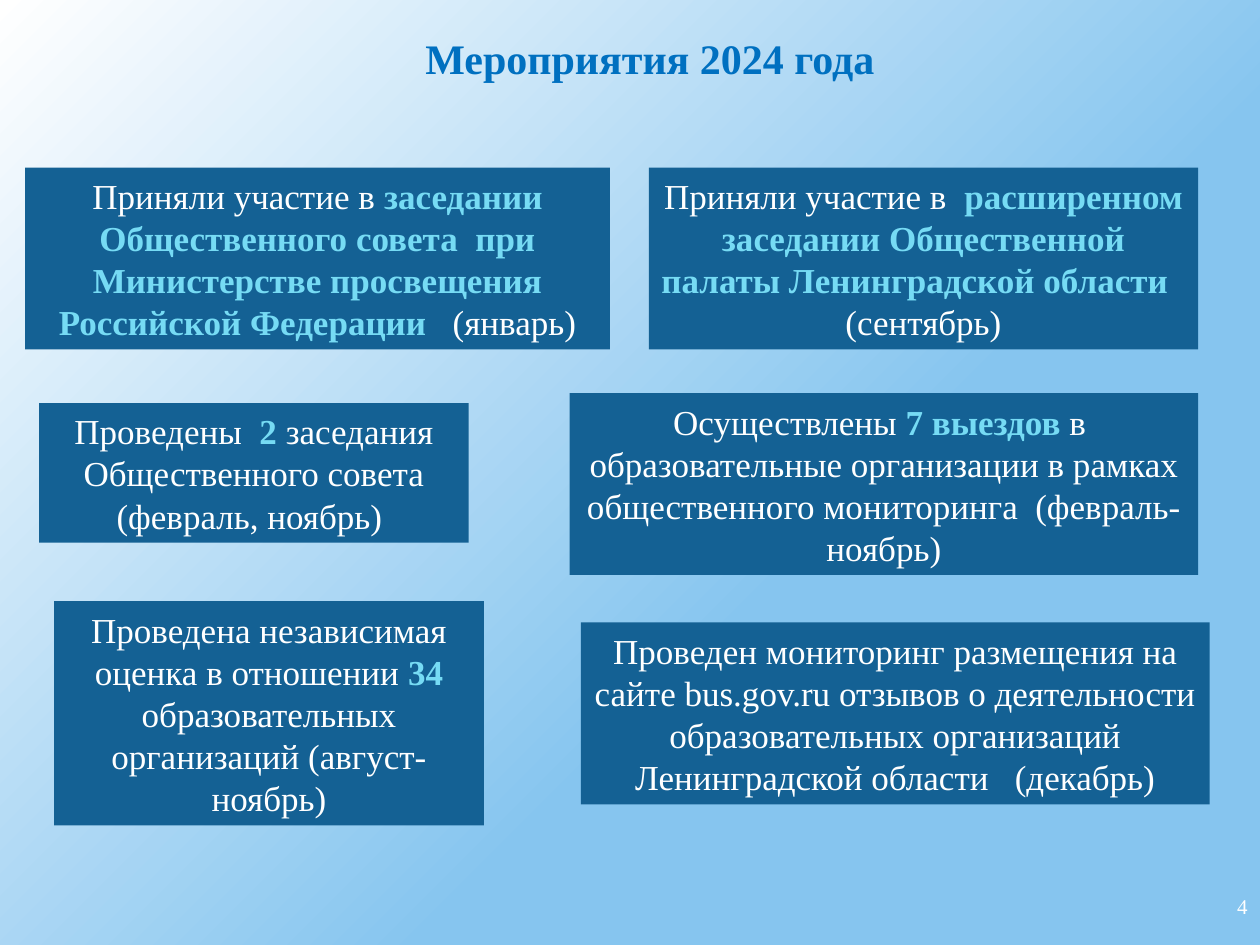
from dataclasses import dataclass

from pptx import Presentation
from pptx.dml.color import RGBColor
from pptx.enum.shapes import MSO_SHAPE
from pptx.enum.text import MSO_ANCHOR, MSO_AUTO_SIZE, PP_ALIGN
from pptx.util import Inches, Pt


def color(hex_string):
    """Turn a hex string into a colour."""
    return RGBColor.from_string(hex_string)


@dataclass
class EventSlide:
    """Style and current slide, measured on a grid of 100 columns by 75 rows."""

    slide: object
    font: str = "Times New Roman"
    cell: float = 0.1
    card_fill: str = "146194"
    accent: str = "76DBF4"
    light: str = "FFFFFF"
    heading: str = "0070C0"
    line_rows: float = 3.36
    padding_rows: float = 1

    def area(self, column, row, columns, rows):
        """Convert grid units to lengths."""
        return [Inches(value * self.cell) for value in (column, row, columns, rows)]

    def background(self, start, end, end_position):
        """Fill the background with a diagonal gradient."""
        fill = self.slide.background.fill
        fill.gradient()
        fill.gradient_angle = 315
        for stop, hex_string, position in zip(
            fill.gradient_stops, (start, end), (0, end_position)
        ):
            stop.color.rgb = color(hex_string)
            stop.position = position

    def add_text(self, shape, text, size, ink, alignment=PP_ALIGN.CENTER, bold=False):
        """Set a paragraph in which the parts between asterisks are accented."""
        frame = shape.text_frame
        frame.word_wrap = True
        frame.vertical_anchor = MSO_ANCHOR.MIDDLE
        paragraph = frame.paragraphs[0]
        paragraph.alignment = alignment
        for index, part in enumerate(text.split("*")):
            accented = index % 2 == 1
            run = paragraph.add_run()
            run.text = part
            run.font.name = self.font
            run.font.size = Pt(size)
            run.font.bold = bold or accented
            run.font.color.rgb = color(self.accent if accented else ink)
        return frame

    def title(self, text, *place):
        """Add the centred heading."""
        shape = self.slide.shapes.add_textbox(*self.area(*place))
        self.add_text(shape, text, 24, self.heading, bold=True)

    def page_number(self, text, *place):
        """Add the page number."""
        shape = self.slide.shapes.add_textbox(*self.area(*place))
        self.add_text(shape, text, 12, self.light, PP_ALIGN.RIGHT)

    def card(self, text, column, row, columns, lines):
        """Add an event card as high as its lines of text."""
        rows = lines * self.line_rows + self.padding_rows
        shape = self.slide.shapes.add_shape(
            MSO_SHAPE.RECTANGLE, *self.area(column, row, columns, rows)
        )
        shape.shadow.inherit = False
        shape.fill.solid()
        shape.fill.fore_color.rgb = color(self.card_fill)
        shape.line.fill.background()
        frame = self.add_text(shape, text, 20, self.light)
        frame.auto_size = MSO_AUTO_SIZE.SHAPE_TO_FIT_TEXT


EVENTS = [
    ("Приняли участие в *заседании Общественного совета  при Министерстве "
     "просвещения Российской Федерации  * (январь)", 2, 13.3, 46.4, 4),
    ("Приняли участие в  *расширенном заседании Общественной палаты "
     "Ленинградской области  * (сентябрь)", 51.5, 13.3, 43.6, 4),
    ("Проведены  *2 *заседания Общественного совета (февраль, ноябрь) ",
     3.1, 32, 34.1, 3),
    ("Осуществлены *7 выездов *в  образовательные организации в рамках "
     "общественного мониторинга  (февраль-ноябрь)", 45.2, 31.2, 49.9, 4),
    ("Проведена независимая оценка в отношении *34 *образовательных "
     "организаций (август-ноябрь)", 4.3, 47.7, 34.1, 5),
    ("Проведен мониторинг размещения на сайте bus.gov.ru отзывов о "
     "деятельности образовательных организаций Ленинградской области   "
     "(декабрь)", 46.1, 49.4, 49.9, 4),
]


def main():
    """Build and save the slide."""
    presentation = Presentation()
    presentation.slide_width = Inches(10)
    presentation.slide_height = Inches(7.5)
    slide = presentation.slides.add_slide(presentation.slide_layouts[6])
    events = EventSlide(slide)
    events.background("FFFFFF", "86C5EF", 0.62)
    events.title("Мероприятия 2024 года ", 9.1, 2.1, 85.8, 5)
    events.page_number("4", 97.2, 70.6, 2.8, 2.7)
    for event in EVENTS:
        events.card(*event)
    presentation.save("out.pptx")


if __name__ == "__main__":
    main()
